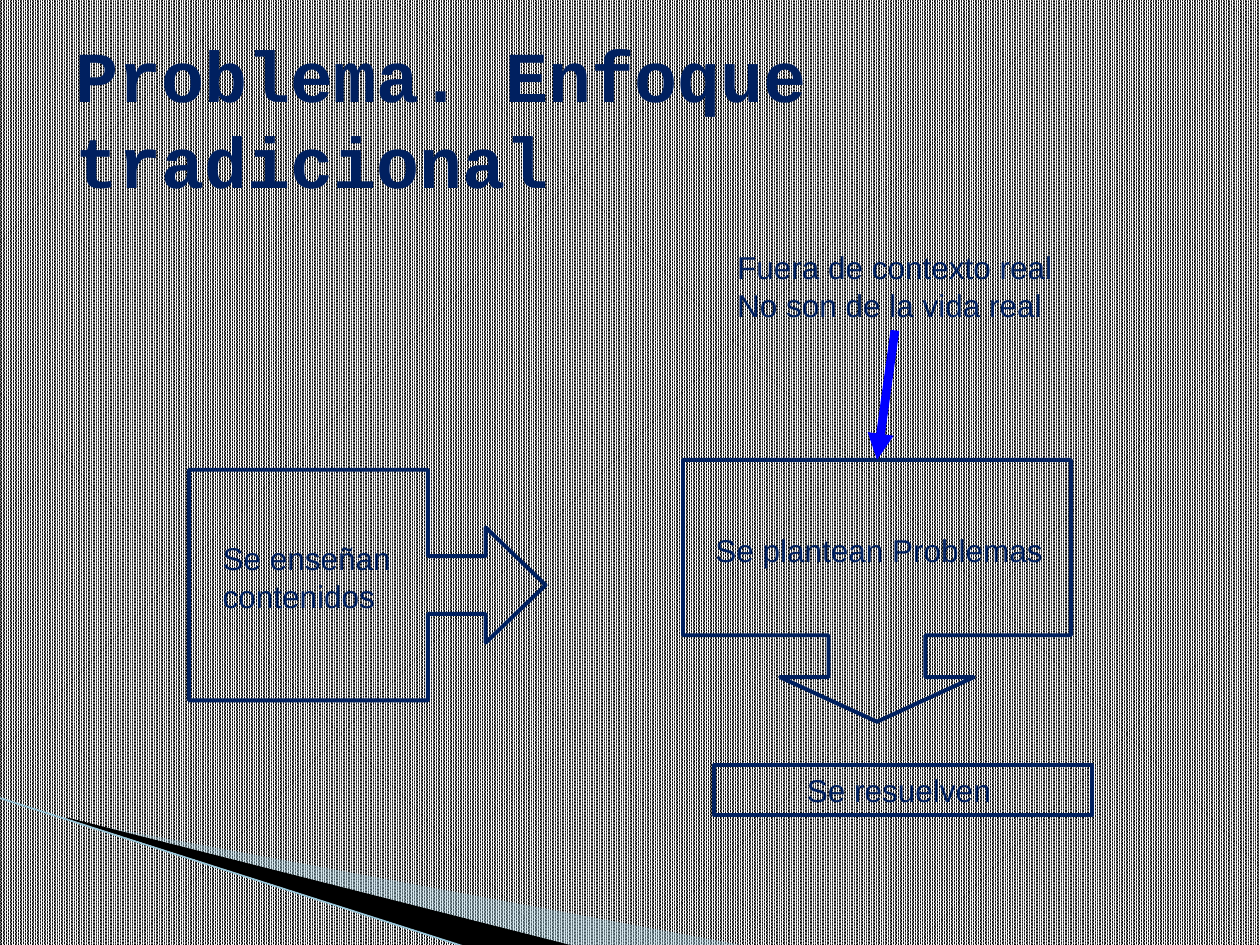
from lxml import etree
from pptx import Presentation
from pptx.dml.color import RGBColor
from pptx.enum.dml import MSO_PATTERN
from pptx.enum.shapes import MSO_CONNECTOR, MSO_SHAPE
from pptx.enum.text import MSO_ANCHOR, MSO_AUTO_SIZE, PP_ALIGN
from pptx.oxml.ns import qn
from pptx.util import Cm, Pt

STRAIGHT = MSO_CONNECTOR.STRAIGHT
RECTANGLE = MSO_SHAPE.RECTANGLE
RIGHT_CALLOUT = MSO_SHAPE.RIGHT_ARROW_CALLOUT
DOWN_CALLOUT = MSO_SHAPE.DOWN_ARROW_CALLOUT
PERCENT_90 = MSO_PATTERN.PERCENT_90
MIDDLE = MSO_ANCHOR.MIDDLE
FIT_SHAPE = MSO_AUTO_SIZE.SHAPE_TO_FIT_TEXT
LEFT, CENTER = PP_ALIGN.LEFT, PP_ALIGN.CENTER
TOP_SIDE, BOTTOM_SIDE = 0, 2

COLORS = {
    "navy": "002060",
    "blue": "0000FF",
    "mist": "A0CBDC",
    "sky": "97C5D8",
    "black": "000000",
    "white": "FFFFFF",
}


class SlideBuilder:
    """Draws the elements of one slide in a shared style."""

    def __init__(self, slide, font="Arial", size=18, line_width=2.25):
        self.s = slide
        self.font = font
        self.size = size
        self.line_width = line_width

    def color(self, name):
        return RGBColor.from_string(COLORS[name])

    def background(self, fore, back):
        fill = self.s.background.fill
        fill.patterned()
        fill.pattern = PERCENT_90
        fill.fore_color.rgb = self.color(fore)
        fill.back_color.rgb = self.color(back)

    def set_text(self, sp, text, align=LEFT, font=None, size=None, bold=False):
        tf = sp.text_frame
        tf.text = text
        for p in tf.paragraphs:
            p.alignment = align
            for r in p.runs:
                r.font.name = font or self.font
                r.font.size = Pt(size or self.size)
                r.font.bold = bold
                r.font.color.rgb = self.color("navy")

    def title(self, text, x, y, w, h):
        sp = self.s.shapes.add_textbox(Cm(x), Cm(y), Cm(w), Cm(h))
        sp.text_frame.word_wrap = True
        sp.text_frame.vertical_anchor = MIDDLE
        self.set_text(sp, text, font="Courier New", size=41, bold=True)

    def label(self, text, x, y, w, h):
        sp = self.s.shapes.add_textbox(Cm(x), Cm(y), Cm(w), Cm(h))
        sp.text_frame.word_wrap = False
        sp.text_frame.auto_size = FIT_SHAPE
        self.set_text(sp, text)
        return sp

    def outline(self, kind, x, y, w, h, adjustments=()):
        sp = self.s.shapes.add_shape(kind, Cm(x), Cm(y), Cm(w), Cm(h))
        sp.shadow.inherit = False
        sp.fill.background()
        sp.line.color.rgb = self.color("navy")
        sp.line.width = Pt(self.line_width)
        for i, value in enumerate(adjustments):
            sp.adjustments[i] = value
        return sp

    def box(self, text, x, y, w, h):
        sp = self.outline(RECTANGLE, x, y, w, h)
        sp.text_frame.word_wrap = True
        sp.text_frame.auto_size = FIT_SHAPE
        self.set_text(sp, text, CENTER)

    def wedge(self, points, color, opacity=100):
        start, *rest = [(Cm(x), Cm(y)) for x, y in points]
        builder = self.s.shapes.build_freeform(*start)
        builder.add_line_segments(rest, close=True)
        sp = builder.convert_to_shape()
        sp.shadow.inherit = False
        sp.line.fill.background()
        sp.fill.solid()
        sp.fill.fore_color.rgb = self.color(color)
        if opacity < 100:
            clr = sp.element.spPr.find(qn("a:solidFill")).find(qn("a:srgbClr"))
            etree.SubElement(clr, qn("a:alpha"), val=str(opacity * 1000))

    def line(self, x1, y1, x2, y2, color, width):
        cxn = self.s.shapes.add_connector(STRAIGHT, Cm(x1), Cm(y1), Cm(x2), Cm(y2))
        cxn.line.color.rgb = self.color(color)
        cxn.line.width = Pt(width)
        etree.SubElement(cxn.element.spPr, qn("a:effectLst"))
        return cxn

    def arrow(self, source, target, color, width):
        cxn = self.line(0, 0, 1, 1, color, width)
        cxn.begin_connect(source, BOTTOM_SIDE)
        cxn.end_connect(target, TOP_SIDE)
        ln = cxn.element.spPr.find(qn("a:ln"))
        etree.SubElement(ln, qn("a:tailEnd"), type="triangle")


def main():
    prs = Presentation()
    prs.slide_width, prs.slide_height = Cm(25.4), Cm(19.05)
    b = SlideBuilder(prs.slides.add_slide(prs.slide_layouts[6]))

    b.background("white", "black")
    b.wedge([(1.4, 16.54), (15.11, 19.08), (11.58, 19.08), (1.4, 16.51)], "mist", 40)
    b.wedge([(1.35, 16.48), (11.61, 19.08), (9.45, 19.1), (1.37, 16.51)], "black")
    b.line(-0.03, 16.08, 9.42, 19.1, "sky", 0.95)

    b.title("Problema. Enfoque tradicional", 1.27, 0.76, 22.86, 3.18)
    b.outline(RIGHT_CALLOUT, 3.81, 9.47, 7.19, 4.65, (0.25, 0.25, 0.26, 0.67))
    b.label("Se enseñan\ncontenidos", 4.24, 10.74, 4.06, 1.78)
    problems = b.outline(DOWN_CALLOUT, 13.77, 9.27, 7.82, 5.28, (0.37, 0.37, 0.17, 0.67))
    b.label("Se plantean Problemas", 14.17, 10.59, 7.11, 1.02)
    b.box("Se resuelven ", 14.4, 15.42, 7.62, 1.02)
    context = b.label("Fuera de contexto real\nNo son de la vida real", 14.61, 4.88, 6.86, 1.78)
    b.arrow(context, problems, "blue", 5)

    prs.save("out.pptx")


if __name__ == "__main__":
    main()
